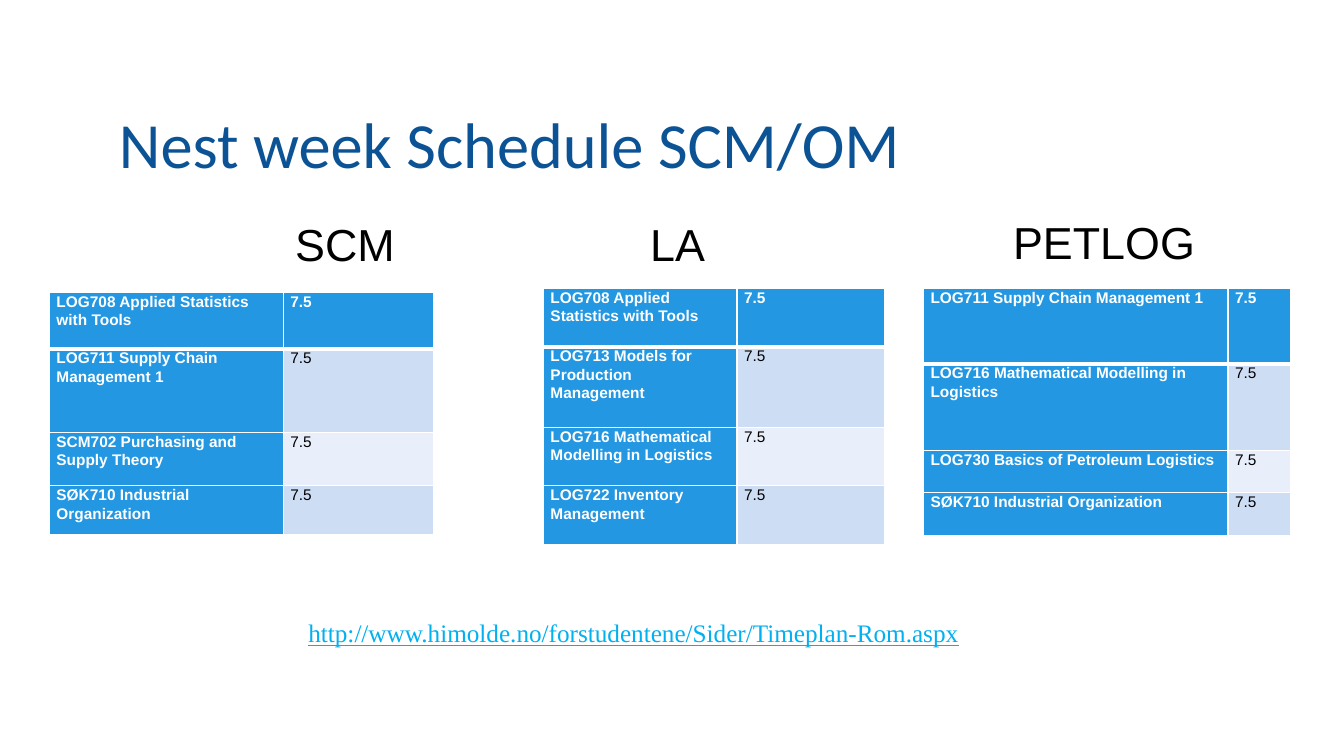
from dataclasses import dataclass

from lxml import etree
from pptx import Presentation
from pptx.dml.color import RGBColor
from pptx.enum.text import MSO_ANCHOR, PP_ALIGN
from pptx.oxml.ns import qn
from pptx.util import Inches, Pt

LEFT, MIDDLE, TOP = PP_ALIGN.LEFT, MSO_ANCHOR.MIDDLE, MSO_ANCHOR.TOP
TITLE_ONLY = 5


@dataclass(frozen=True)
class Theme:
    title: str = "0B5395"
    text: str = "000000"
    light: str = "FFFFFF"
    link: str = "00B0F0"
    course: str = "2397E2"
    bands: tuple = ("E8EFFA", "CDDDF4")
    title_size: int = 46
    heading_size: int = 32
    table_size: int = 11
    link_size: int = 18
    title_font: str = "Calibri"
    body_font: str = "Arial"
    link_font: str = "Times New Roman"


THEME = Theme()
SLIDE_SIZE = (13.33, 7.5)
CREDITS = "7.5"
CELL_INSET = 0.07
TITLE_SPACING, CELL_SPACING = 0.9, 1.07
BORDER, HEADER_BORDER = 1, 3

TITLE = ("Nest week Schedule SCM/OM", (1.08, 0.98, 11.59, 0.96))
LINK = ("http://www.himolde.no/forstudentene/Sider/Timeplan-Rom.aspx", (2.96, 6.08, 6.78, 0.4))

# Boxes are left, top, width, height in inches.
PROGRAMMES = [
    {
        "heading": "SCM",
        "heading_box": (2.83, 2.1, 1.47, 0.64),
        "origin": (0.49, 2.9),
        "columns": (2.32, 1.49),
        "rows": (0.56, 0.83, 0.53, 0.48),
        "courses": ["LOG708 Applied Statistics with Tools", "LOG711 Supply Chain Management 1",
                    "SCM702 Purchasing and Supply Theory", "SØK710 Industrial Organization"],
    },
    {
        "heading": "LA",
        "heading_box": (6.35, 2.1, 1.47, 0.64),
        "origin": (5.39, 2.86),
        "columns": (1.92, 1.46),
        "rows": (0.58, 0.8, 0.58, 0.58),
        "courses": ["LOG708 Applied Statistics with Tools", "LOG713 Models for Production Management",
                    "LOG716 Mathematical Modelling in Logistics", "LOG722 Inventory Management"],
    },
    {
        "heading": "PETLOG",
        "heading_box": (9.95, 2.08, 2.33, 0.64),
        "origin": (9.16, 2.86),
        "columns": (3.02, 0.62),
        "rows": (0.75, 0.86, 0.42, 0.42),
        "courses": ["LOG711 Supply Chain Management 1", "LOG716 Mathematical Modelling in Logistics",
                    "LOG730 Basics of Petroleum Logistics", "SØK710 Industrial Organization"],
    },
]


def add_run(paragraph, text, size, font, color, bold=False, underline=False):
    paragraph.alignment = LEFT
    run = paragraph.add_run()
    run.text = text
    run.font.size = Pt(size)
    run.font.name = font
    run.font.bold = bold
    run.font.underline = underline
    run.font.color.rgb = RGBColor.from_string(color)


def add_text(slide, text, box, size, font, color, wrap=True, underline=False):
    shape = slide.shapes.add_textbox(*map(Inches, box))
    shape.text_frame.word_wrap = wrap
    add_run(shape.text_frame.paragraphs[0], text, size, font, color, underline=underline)


def set_borders(cell, top, bottom):
    """Draw the four cell edges; call before the fill, which must follow them in the XML."""
    properties = cell._tc.get_or_add_tcPr()
    for side, width in (("L", BORDER), ("R", BORDER), ("T", top), ("B", bottom)):
        line = etree.SubElement(properties, qn(f"a:ln{side}"), w=str(Pt(width)))
        fill = etree.SubElement(line, qn("a:solidFill"))
        etree.SubElement(fill, qn("a:srgbClr"), val=THEME.light)


def format_cell(cell, text, row, column):
    highlighted = row == 0 or column == 0
    set_borders(cell, HEADER_BORDER if row == 1 else BORDER, HEADER_BORDER if row == 0 else BORDER)
    cell.fill.solid()
    cell.fill.fore_color.rgb = RGBColor.from_string(THEME.course if highlighted else THEME.bands[row % 2])
    cell.margin_left = cell.margin_right = Inches(CELL_INSET)
    cell.margin_top = cell.margin_bottom = 0
    cell.vertical_anchor = TOP
    paragraph = cell.text_frame.paragraphs[0]
    paragraph.line_spacing = CELL_SPACING
    add_run(paragraph, text, THEME.table_size, THEME.body_font,
            THEME.light if highlighted else THEME.text, bold=highlighted)


def add_course_table(slide, programme):
    columns, rows = programme["columns"], programme["rows"]
    box = (*programme["origin"], sum(columns), sum(rows))
    table = slide.shapes.add_table(len(rows), len(columns), *map(Inches, box)).table
    table.first_row = table.horz_banding = False
    for column, width in zip(table.columns, columns):
        column.width = Inches(width)
    for index, (height, course) in enumerate(zip(rows, programme["courses"])):
        table.rows[index].height = Inches(height)
        for column, text in enumerate((course, CREDITS)):
            format_cell(table.cell(index, column), text, index, column)


def add_title(slide):
    text, box = TITLE
    title = slide.shapes.title
    title.left, title.top, title.width, title.height = map(Inches, box)
    title.text_frame.word_wrap = True
    title.text_frame.vertical_anchor = MIDDLE
    paragraph = title.text_frame.paragraphs[0]
    paragraph.line_spacing = TITLE_SPACING
    add_run(paragraph, text, THEME.title_size, THEME.title_font, THEME.title)


def main():
    presentation = Presentation()
    presentation.slide_width, presentation.slide_height = map(Inches, SLIDE_SIZE)
    slide = presentation.slides.add_slide(presentation.slide_layouts[TITLE_ONLY])
    add_title(slide)
    for programme in PROGRAMMES:
        add_text(slide, programme["heading"], programme["heading_box"],
                 THEME.heading_size, THEME.body_font, THEME.text)
        add_course_table(slide, programme)
    add_text(slide, *LINK, THEME.link_size, THEME.link_font, THEME.link, wrap=False, underline=True)
    presentation.save("out.pptx")


if __name__ == "__main__":
    main()
